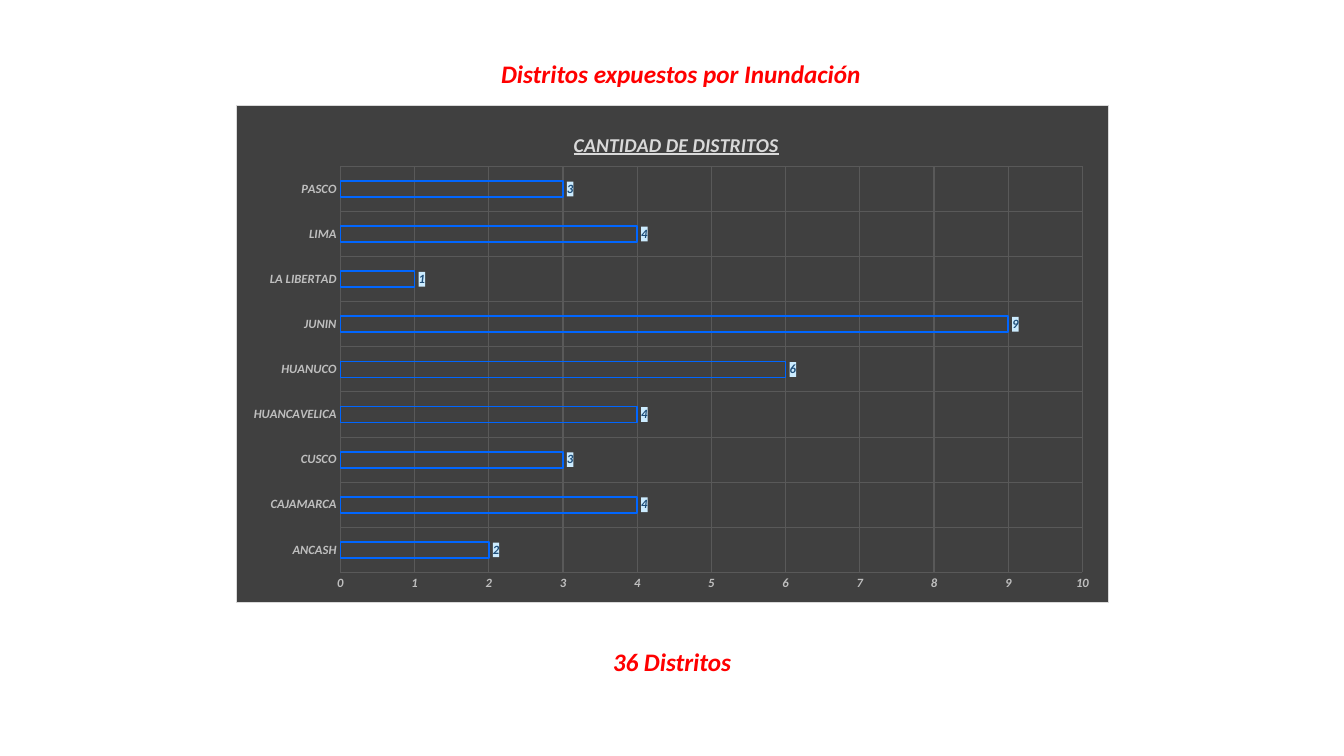
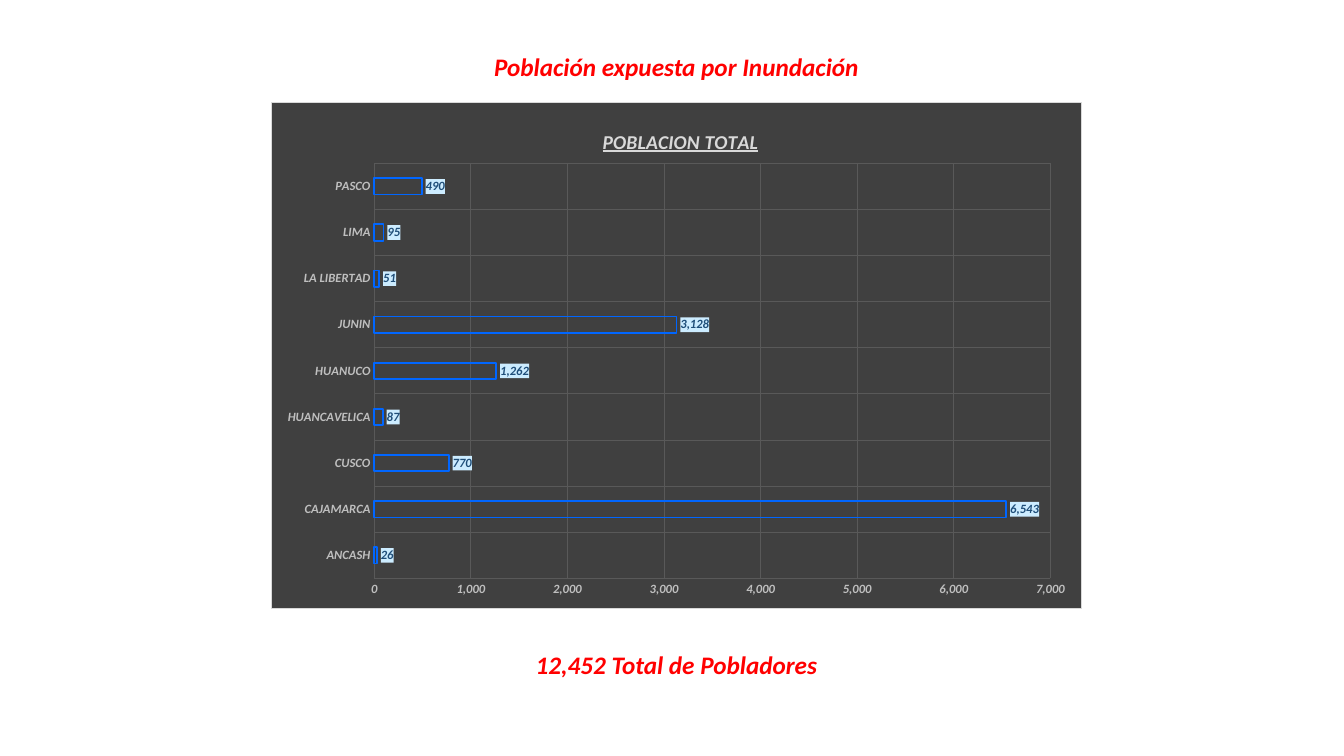
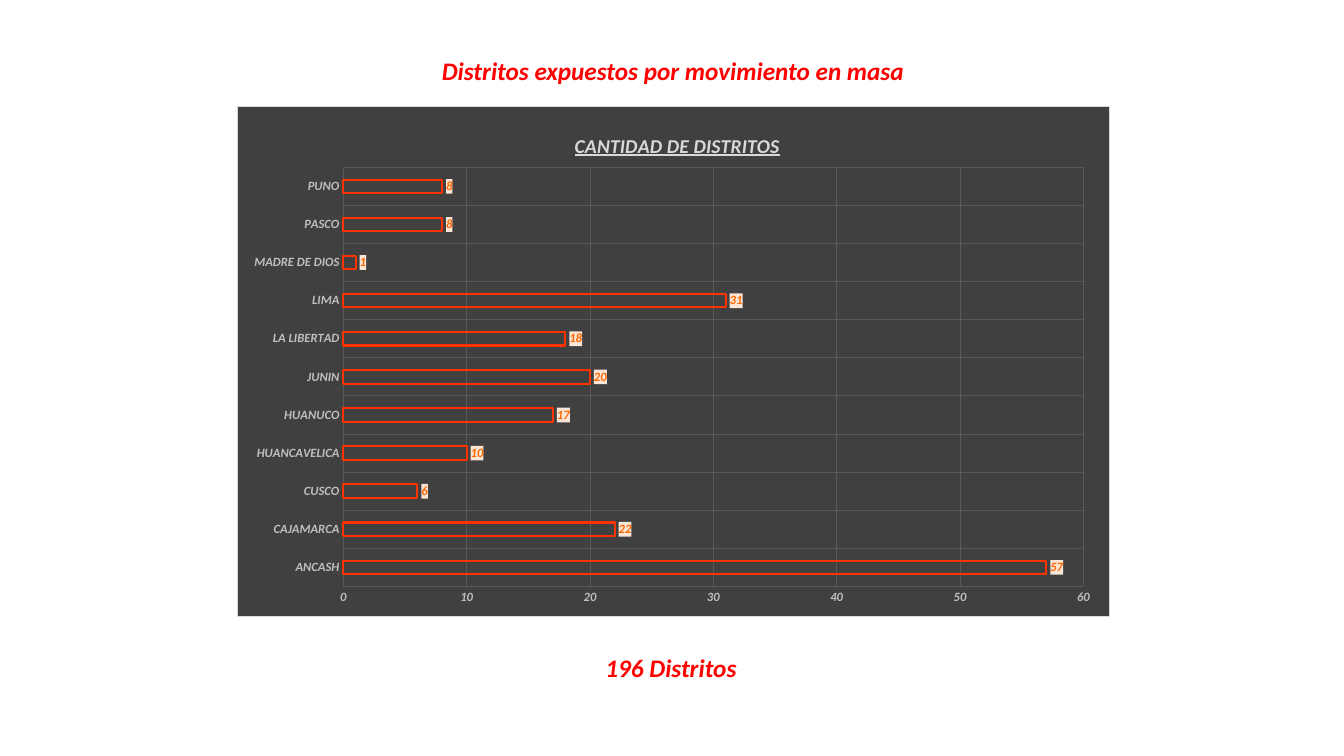
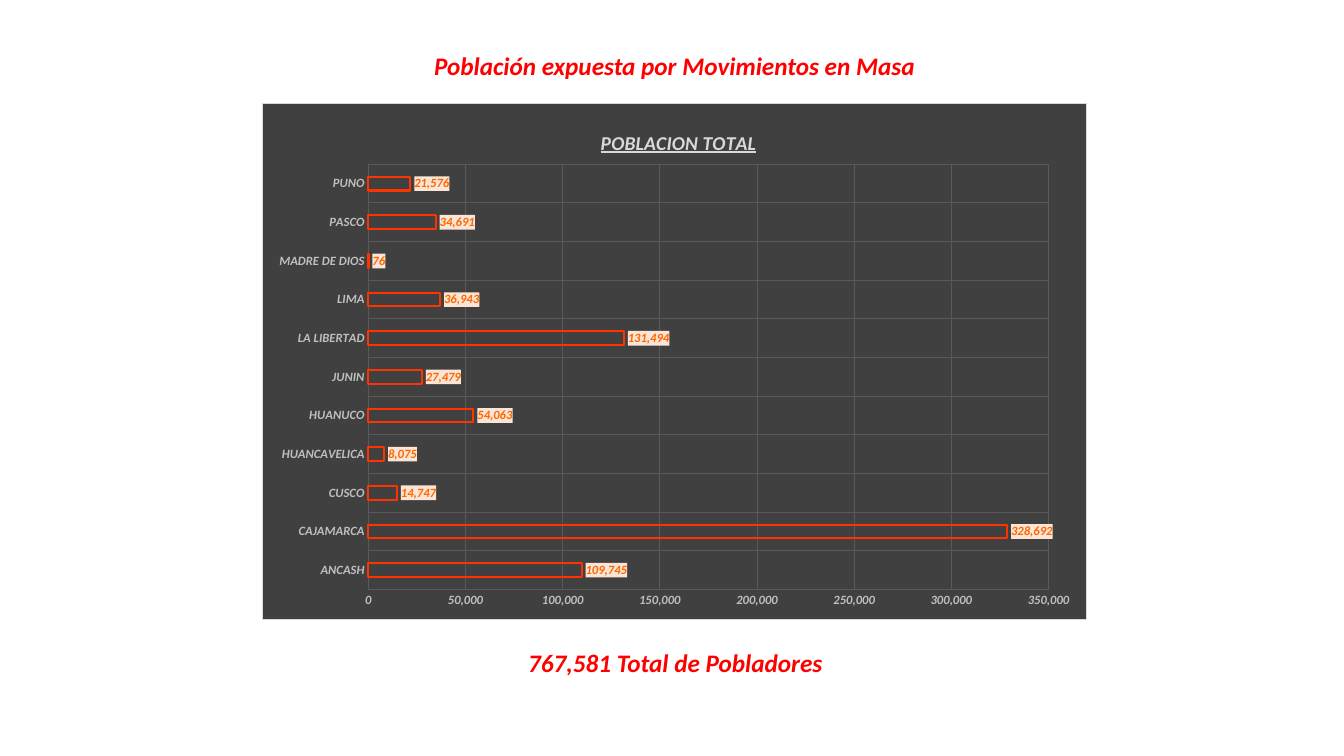
from pptx import Presentation
from pptx.chart.data import CategoryChartData
from pptx.dml.color import RGBColor
from pptx.enum.chart import XL_CHART_TYPE, XL_LABEL_POSITION, XL_TICK_MARK
from pptx.enum.text import MSO_AUTO_SIZE, PP_ALIGN
from pptx.oxml import parse_xml
from pptx.oxml.ns import nsdecls, qn
from pptx.util import Pt

PX = 9071
FONT = "Calibri"
COLORS = {
    "heading": "FF0000", "panel": "404040", "border": "D9D9D9",
    "title": "D9D9D9", "axis": "BFBFBF", "grid": "595959",
}
FLOOD = {"line": "0066FF", "width": 1.25, "label": "1F4E79", "label_fill": "CCECFF"}
LANDSLIDE = {"line": "FF3300", "width": 1.5, "label": "FF6600", "label_fill": "FBE5D6"}
FLOOD_REGIONS = ["ANCASH", "CAJAMARCA", "CUSCO", "HUANCAVELICA", "HUANUCO",
                 "JUNIN", "LA LIBERTAD", "LIMA", "PASCO"]
LANDSLIDE_REGIONS = FLOOD_REGIONS[:-1] + ["MADRE DE DIOS", "PASCO", "PUNO"]
TITLE_WIDTHS = {"CANTIDAD DE DISTRITOS": 205, "POBLACION TOTAL": 155}
TITLE_TOP, PLOT_TOP, PLOT_BOTTOM = 22, 61, 30
HEADING_HEIGHT = 40

SLIDES = [
    {"heading": ("Distritos expuestos por Inundación", 489, 53, 384),
     "total": ("36 Distritos", 596, 641, 152),
     "title": "CANTIDAD DE DISTRITOS", "box": (236, 105, 873, 498), "sides": (104, 26),
     "regions": FLOOD_REGIONS, "values": [2, 4, 3, 4, 6, 9, 1, 4, 3],
     "axis": (10, 1), "theme": FLOOD},
    {"heading": ("Población expuesta por Inundación", 482, 46, 389),
     "total": ("12,452 Total de Pobladores", 507, 644, 339),
     "title": "POBLACION TOTAL", "box": (271, 102, 811, 507), "sides": (103, 31),
     "regions": FLOOD_REGIONS, "values": [26, 6543, 770, 87, 1262, 3128, 51, 95, 490],
     "axis": (7000, 1000), "theme": FLOOD},
    {"heading": ("Distritos expuestos por movimiento en masa", 429, 50, 488),
     "total": ("196 Distritos", 587, 647, 168),
     "title": "CANTIDAD DE DISTRITOS", "box": (237, 106, 873, 511), "sides": (106, 26),
     "regions": LANDSLIDE_REGIONS, "values": [57, 22, 6, 10, 17, 20, 18, 31, 1, 8, 8],
     "axis": (60, 10), "theme": LANDSLIDE},
    {"heading": ("Población expuesta por Movimientos en Masa", 421, 45, 507),
     "total": ("767,581 Total de Pobladores", 507, 642, 337),
     "title": "POBLACION TOTAL", "box": (262, 103, 825, 517), "sides": (106, 38),
     "regions": LANDSLIDE_REGIONS,
     "values": [109745, 328692, 14747, 8075, 54063, 27479, 131494, 36943, 76, 34691, 21576],
     "axis": (350000, 50000), "theme": LANDSLIDE},
]


def style_font(font, size, color):
    font.name = FONT
    font.size = Pt(size)
    font.bold = font.italic = True
    font.color.rgb = RGBColor.from_string(color)


def style_line(line, color, width):
    line.color.rgb = RGBColor.from_string(color)
    line.width = Pt(width)


def add_heading(s, text, x, y, w):
    tf = s.shapes.add_textbox(x * PX, y * PX, w * PX, HEADING_HEIGHT * PX).text_frame
    tf.word_wrap = True
    tf.auto_size = MSO_AUTO_SIZE.SHAPE_TO_FIT_TEXT
    p = tf.paragraphs[0]
    p.text = text
    p.alignment = PP_ALIGN.CENTER
    style_font(p.runs[0].font, 18, COLORS["heading"])


def add_fill(parent, fill, border=None):
    line = (f'<a:ln w="9525"><a:solidFill><a:srgbClr val="{border}"/></a:solidFill></a:ln>'
            if border else "<a:ln><a:noFill/></a:ln>")
    parent.find(qn("c:txPr")).addprevious(parse_xml(
        f'<c:spPr {nsdecls("c", "a")}><a:solidFill><a:srgbClr val="{fill}"/>'
        f'</a:solidFill>{line}</c:spPr>'))


def set_layout(parent, index, values, inner=False):
    for old in parent.findall(qn("c:layout")):
        parent.remove(old)
    target = '<c:layoutTarget val="inner"/>' if inner else ""
    modes = "".join(f'<c:{k}Mode val="edge"/>' for k in "xy")
    sizes = "".join(f'<c:{k} val="{v:.4f}"/>' for k, v in zip("xywh", values))
    parent.insert(index, parse_xml(
        f'<c:layout {nsdecls("c")}><c:manualLayout>{target}{modes}{sizes}'
        '</c:manualLayout></c:layout>'))


def style_axis(axis):
    axis.major_tick_mark = axis.minor_tick_mark = XL_TICK_MARK.NONE
    axis.format.line.fill.background()
    axis.has_major_gridlines = True
    style_line(axis.major_gridlines.format.line, COLORS["grid"], 0.75)
    style_font(axis.tick_labels.font, 9, COLORS["axis"])


def add_bar_chart(s, title, box, sides, regions, values, axis, theme):
    data = CategoryChartData(number_format="#,##0")
    data.categories = regions
    data.add_series("Series 1", values)
    chart = s.shapes.add_chart(XL_CHART_TYPE.BAR_CLUSTERED,
                               *(v * PX for v in box), data).chart
    chart.has_legend = False
    chart.font.name = FONT
    chart.font.size = Pt(10)
    chart_space = chart.element
    add_fill(chart_space, COLORS["panel"], COLORS["border"])

    tf = chart.chart_title.text_frame
    tf.text = title
    font = tf.paragraphs[0].runs[0].font
    style_font(font, 14, COLORS["title"])
    font.underline = True
    _, _, w, h = box
    left, right = sides
    set_layout(next(chart_space.iter(qn("c:title"))), 1,
               ((w - TITLE_WIDTHS[title]) / 2 / w, TITLE_TOP / h))
    set_layout(next(chart_space.iter(qn("c:plotArea"))), 0,
               (left / w, PLOT_TOP / h, (w - left - right) / w,
                (h - PLOT_TOP - PLOT_BOTTOM) / h), inner=True)

    style_axis(chart.category_axis)
    style_axis(chart.value_axis)
    chart.value_axis.minimum_scale = 0
    chart.value_axis.maximum_scale, chart.value_axis.major_unit = axis
    chart.value_axis.tick_labels.number_format = "#,##0"
    chart.value_axis.tick_labels.number_format_is_linked = False

    plot = chart.plots[0]
    plot.vary_by_categories = False
    plot.gap_width = 182
    plot.overlap = -50
    series = plot.series[0]
    series.format.fill.background()
    style_line(series.format.line, theme["line"], theme["width"])
    labels = series.data_labels
    labels.show_value = True
    labels.position = XL_LABEL_POSITION.OUTSIDE_END
    labels.number_format = "#,##0"
    labels.number_format_is_linked = False
    style_font(labels.font, 9, theme["label"])
    add_fill(next(chart_space.iter(qn("c:dLbls"))), theme["label_fill"])


def main():
    prs = Presentation()
    prs.slide_width, prs.slide_height = 1344 * PX, 756 * PX
    for content in SLIDES:
        s = prs.slides.add_slide(prs.slide_layouts[6])
        add_heading(s, *content["heading"])
        add_heading(s, *content["total"])
        add_bar_chart(s, **{k: v for k, v in content.items() if k not in ("heading", "total")})
    prs.save("out.pptx")


if __name__ == "__main__":
    main()
